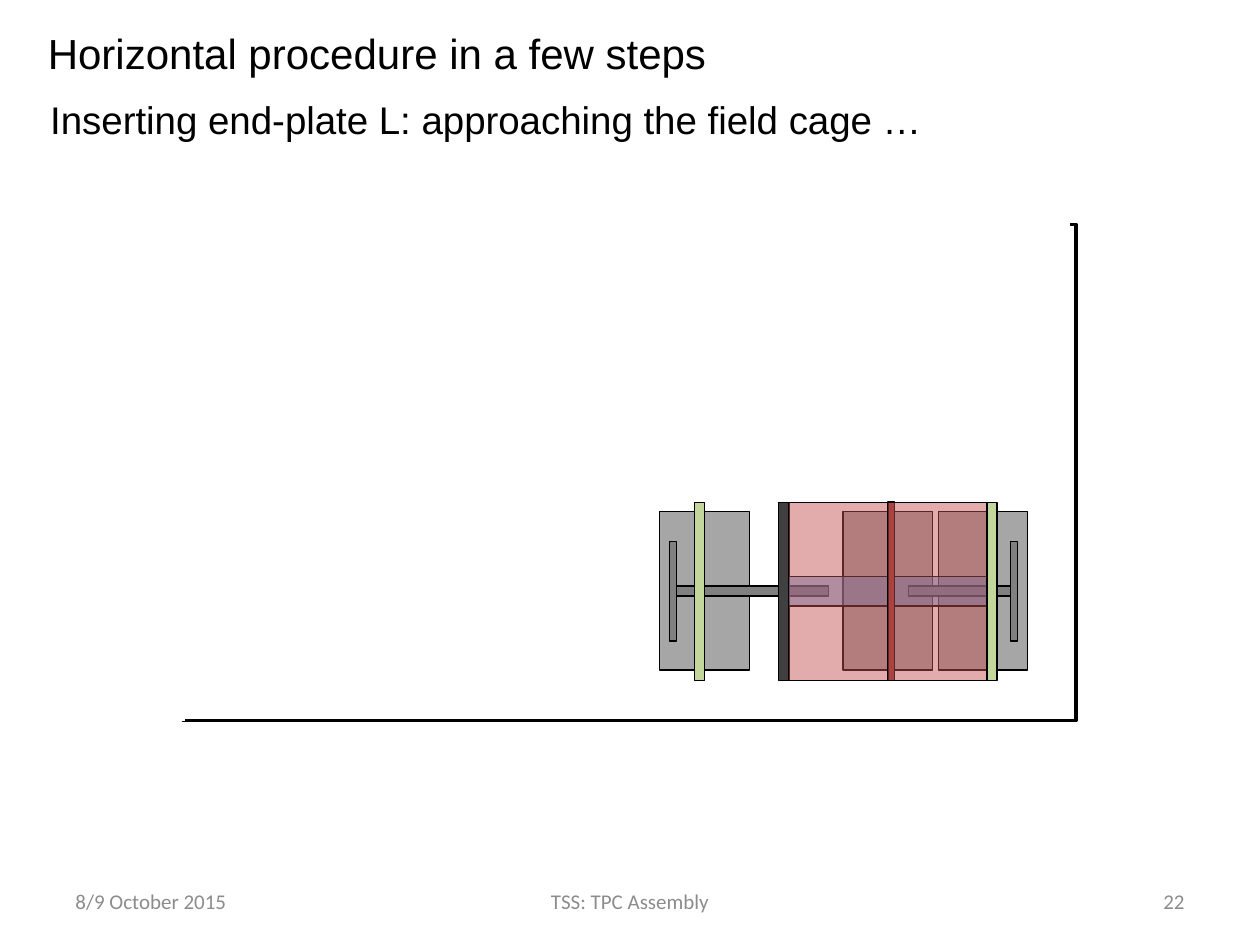
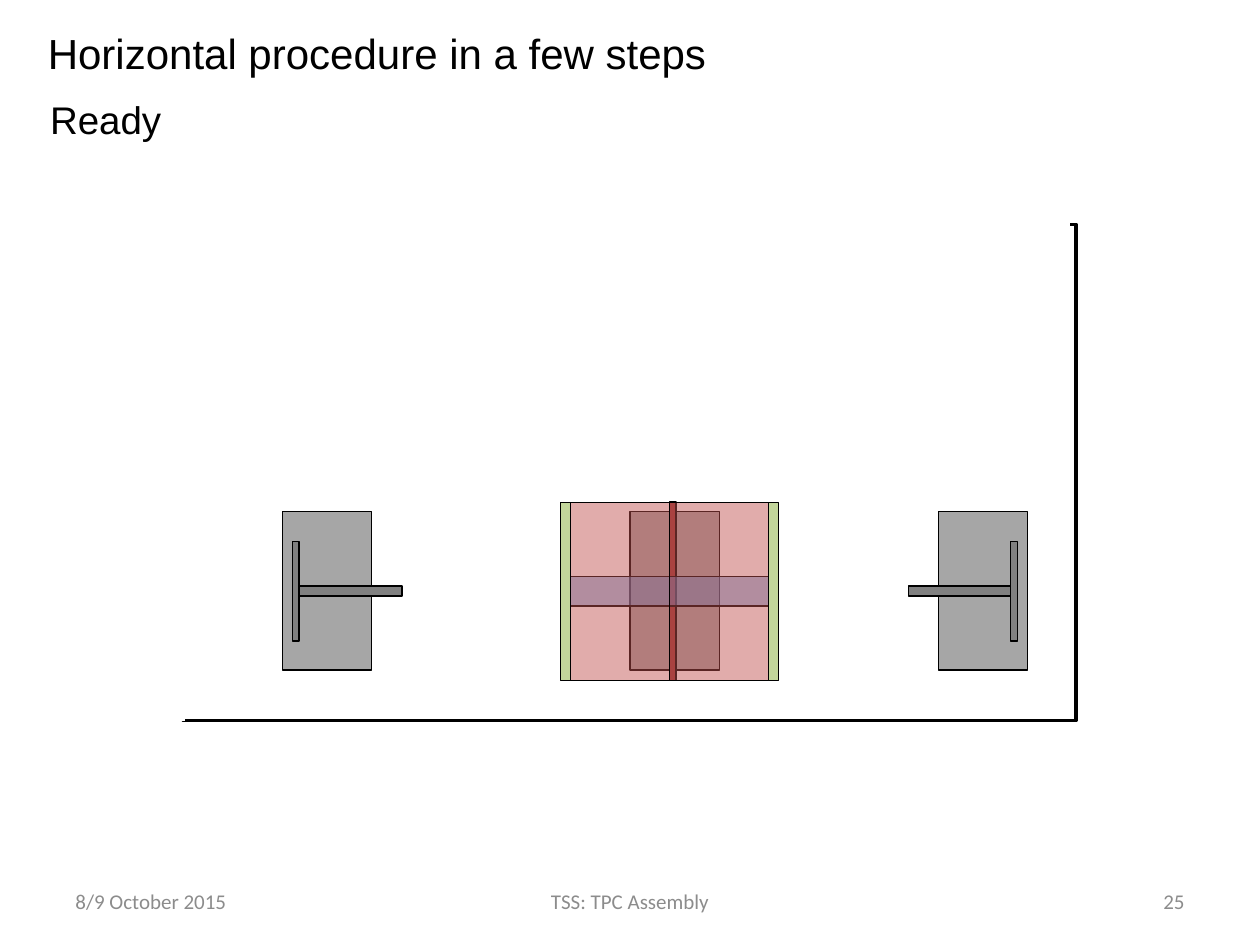
"""Build two slides of the horizontal assembly procedure."""
from dataclasses import dataclass

from lxml import etree
from pptx import Presentation
from pptx import util as u
from pptx.dml.color import RGBColor
from pptx.enum import shapes, text
from pptx.oxml import ns

BLACK, WHITE, GREY = "000000", "FFFFFF", "8C8C8C"


@dataclass(frozen=True)
class Piece:
    """Size, height on the page and colour of one kind of piece."""
    top: float
    width: float
    height: float
    fill: str
    opacity: int = 100


@dataclass(frozen=True)
class Placed:
    """A piece at a horizontal position."""
    piece: Piece
    left: float


@dataclass(frozen=True)
class Step:
    """One slide: its subtitle, number and pieces from back to front."""
    subtitle: str
    subtitle_width: float
    number: int
    pieces: list[Placed]


BLOCK = Piece(292.4, 51.1, 90.6, "A6A6A6")
BAR = Piece(309.6, 3.9, 56.7, "808080")
END_PLATE = Piece(287, 5.8, 101.9, "C3D69B")
DARK_PLATE = Piece(287, 5.8, 101.9, "404040")
MEMBRANE = Piece(286.8, 3.9, 101.9, "953735")
INNER_TUBE = Piece(329.4, 113.2, 17, "558ED5", 52)
CAGE_HALF = Piece(287, 56.6, 102, "C0504D", 47)


def arm(width: float) -> Piece:
    """Return a horizontal arm of the given length."""
    return Piece(334.8, width, 5.8, "808080")


def left_stand(left: float, reach: float) -> list[Placed]:
    """Return a stand whose arm points right."""
    return [Placed(BLOCK, left), Placed(BAR, left + 5.6), Placed(arm(reach), left + 9.5)]


def right_stand(left: float) -> list[Placed]:
    """Return a stand whose arm points left."""
    return [Placed(BLOCK, left), Placed(BAR, left + 41.4), Placed(arm(58.6), left - 17.2)]


def cage_halves(left: float) -> list[Placed]:
    """Return the two halves of the field cage."""
    return [Placed(CAGE_HALF, left + i * CAGE_HALF.width) for i in range(2)]


STEPS = [
    Step("Inserting end-plate L: approaching the field cage …", 518.4, 22, [
        Placed(BLOCK, 481.7), *right_stand(536.2), Placed(END_PLATE, 564),
        *left_stand(377, 87.1), Placed(END_PLATE, 396.8),
        Placed(DARK_PLATE, 445), Placed(INNER_TUBE, 450.7), Placed(MEMBRANE, 507.4),
        *cage_halves(450.7)]),
    Step("Ready", 79.2, 25, [
        Placed(BLOCK, 360), *left_stand(161.4, 58.8), *right_stand(536.2),
        Placed(END_PLATE, 320.4), Placed(MEMBRANE, 382.5), Placed(INNER_TUBE, 326.1),
        *cage_halves(326.1), Placed(END_PLATE, 439.2)]),
]


def color(code: str) -> RGBColor:
    """Turn a hex string into a colour."""
    return RGBColor.from_string(code)


def add_text(page, words: str, left: float, top: float, width: float, height: float, *,
             size: float, font: str, ink: str = BLACK, wrap: bool = False,
             align=text.PP_ALIGN.LEFT, anchor=text.MSO_ANCHOR.TOP) -> None:
    """Add a one-line text box."""
    box = page.shapes.add_textbox(u.Pt(left), u.Pt(top), u.Pt(width), u.Pt(height))
    frame = box.text_frame
    frame.word_wrap = wrap
    frame.vertical_anchor = anchor
    para = frame.paragraphs[0]
    para.alignment = align
    span = para.add_run()
    span.text = words
    span.font.size, span.font.name = u.Pt(size), font
    span.font.color.rgb = color(ink)


def add_box(page, left: float, top: float, width: float, height: float, *,
            fill: str | None = None, opacity: int = 100, weight: float = 0.75) -> None:
    """Add a black-edged rectangle, filled or hollow."""
    box = page.shapes.add_shape(shapes.MSO_SHAPE.RECTANGLE,
                                u.Pt(left), u.Pt(top), u.Pt(width), u.Pt(height))
    box.shadow.inherit = False
    box.line.color.rgb, box.line.width = color(BLACK), u.Pt(weight)
    if fill is None:
        box.fill.background()
        return
    box.fill.solid()
    box.fill.fore_color.rgb = color(fill)
    if opacity < 100:
        tint = box._element.spPr.find(f"{ns.qn('a:solidFill')}/{ns.qn('a:srgbClr')}")
        etree.SubElement(tint, ns.qn("a:alpha"), val=str(opacity * 1000))


def add_cover_line(page, x1: float, y1: float, x2: float, y2: float) -> None:
    """Add a white line that hides one side of the room."""
    line = page.shapes.add_connector(shapes.MSO_CONNECTOR.STRAIGHT,
                                     u.Pt(x1), u.Pt(y1), u.Pt(x2), u.Pt(y2))
    line.line.color.rgb, line.line.width = color(WHITE), u.Pt(3)
    etree.SubElement(line._element.spPr, ns.qn("a:effectLst"))


def add_room(page) -> None:
    """Draw the floor and the right wall."""
    left, top, height = 104.4, 128.2, 283.6
    add_box(page, left, top, 510.5, height, weight=2)
    add_cover_line(page, left - 20.2, top, 611.3, top)
    add_cover_line(page, left, 111.6, left, top + height)


def add_footer(page, number: int) -> None:
    """Add the date, the talk and the page number."""
    align = text.PP_ALIGN
    for words, left, width, side in (("8/9 October 2015", 36, 168, align.LEFT),
                                     ("TSS: TPC Assembly", 246, 228, align.CENTER),
                                     (str(number), 516, 168, align.RIGHT)):
        add_text(page, words, left, 500.5, width, 28.75, size=12, font="Calibri",
                 ink=GREY, wrap=True, align=side, anchor=text.MSO_ANCHOR.MIDDLE)


def add_step(deck, step: Step) -> None:
    """Add the slide of one step."""
    page = deck.slides.add_slide(deck.slide_layouts[6])
    add_text(page, "Horizontal procedure in a few steps", 20.2, 12.2, 394.6, 36,
             size=24, font="Arial")
    add_text(page, step.subtitle, 21.6, 51.1, step.subtitle_width, 33.8,
             size=22, font="Arial")
    add_room(page)
    for placed in step.pieces:
        piece = placed.piece
        add_box(page, placed.left, piece.top, piece.width, piece.height,
                fill=piece.fill, opacity=piece.opacity)
    add_footer(page, step.number)


def main() -> None:
    """Build and save the deck."""
    deck = Presentation()
    deck.slide_width, deck.slide_height = u.Pt(720), u.Pt(540)
    for step in STEPS:
        add_step(deck, step)
    deck.save("out.pptx")


if __name__ == "__main__":
    main()
